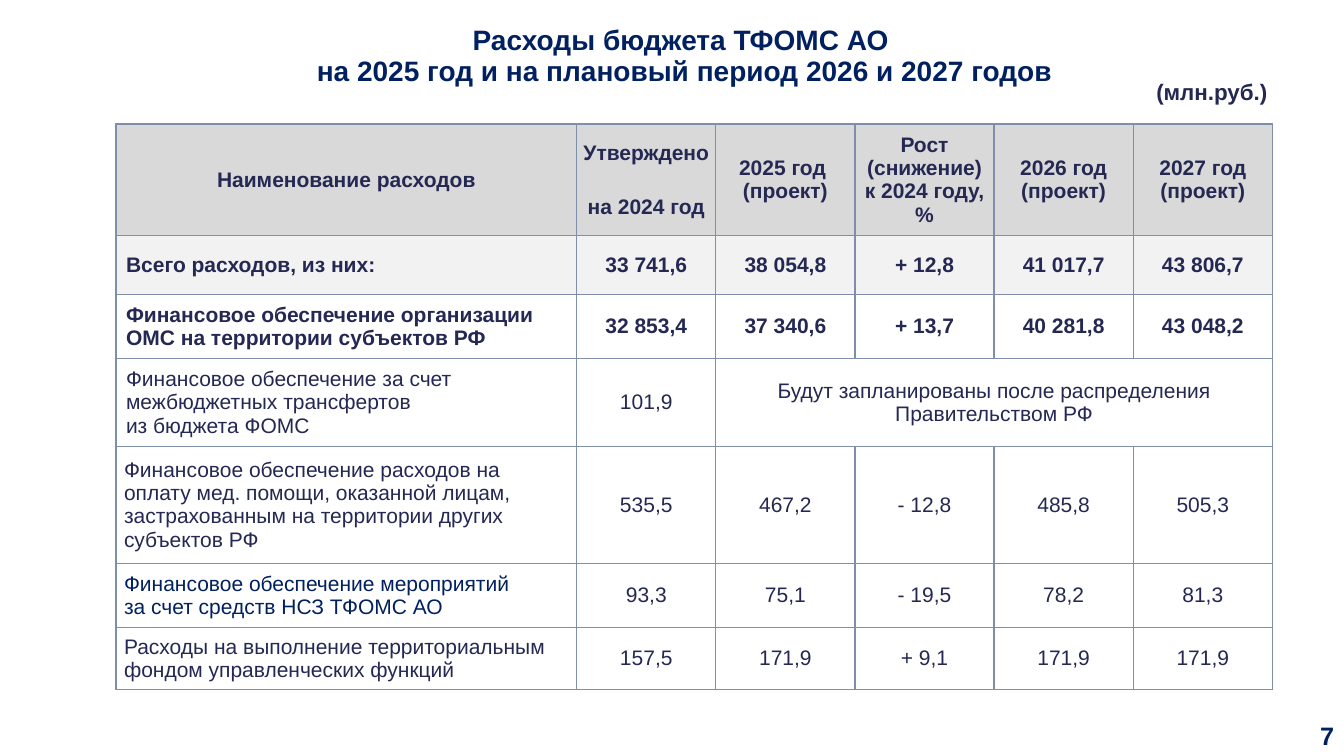
"""Build the slide with the planned expenses of the regional insurance fund."""
from dataclasses import dataclass

from lxml import etree
from pptx import Presentation
from pptx.dml.color import RGBColor
from pptx.enum.text import MSO_ANCHOR, PP_ALIGN
from pptx.oxml.ns import qn
from pptx.util import Inches, Pt

LEFT, CENTER, RIGHT = PP_ALIGN.LEFT, PP_ALIGN.CENTER, PP_ALIGN.RIGHT
TOP, MIDDLE = MSO_ANCHOR.TOP, MSO_ANCHOR.MIDDLE
NAVY = RGBColor(0x00, 0x20, 0x60)
INK = RGBColor(0x24, 0x28, 0x52)
HEADER_GRAY = RGBColor(0xD9, 0xD9, 0xD9)
TOTAL_GRAY = RGBColor(0xF2, 0xF2, 0xF2)
BORDER = RGBColor(0x7F, 0x8F, 0xA9)
FONT = "Arial"
TABLE_SIZE = 15
COLUMN_WIDTHS = [4.57] + [1.38] * 5
HEADER_INSETS = (0.1, 0.05, 0.1, 0, 0.1, 0.1)


@dataclass(frozen=True)
class Label:
    """A single text box or placeholder with its place and look."""

    text: str
    left: float
    top: float
    width: float
    height: float
    size: int
    color: RGBColor
    align: PP_ALIGN
    anchor: MSO_ANCHOR = TOP
    spacing: float = 1.0


@dataclass(frozen=True)
class ExpenseRow:
    """One table row with its texts and look."""

    height: float
    texts: tuple[str, ...]
    bold: bool = False
    fill: RGBColor | None = None
    name_inset: float = 0.08
    name_color: RGBColor = INK


TITLE = Label("Расходы бюджета ТФОМС АО \vна 2025 год и на плановый период 2026 и 2027 годов",
              1.71, 0.21, 10.16, 0.84, 20, NAVY, CENTER, spacing=0.92)
LABELS = (
    Label("(млн.руб.) ", 10.92, 0.73, 1.81, 0.37, 16, INK, RIGHT),
    Label("7", 12.81, 7.1, 0.52, 0.4, 18, NAVY, RIGHT, MIDDLE),
)
ROWS = (
    ExpenseRow(1.11, ("Наименование расходов", "Утверждено \vна 2024 год", "2025 год \n(проект)",
                      "Рост (снижение)\vк 2024 году,\v%", "2026 год (проект)",
                      "2027 год (проект)"), True, HEADER_GRAY),
    ExpenseRow(0.58, ("Всего расходов, из них:", "33 741,6", "38 054,8", "+ 12,8",
                      "41 017,7", "43 806,7"), True, TOTAL_GRAY, 0.1),
    ExpenseRow(0.64, ("Финансовое обеспечение организации ОМС на территории субъектов РФ",
                      "32 853,4", "37 340,6", "+ 13,7", "40 281,8", "43 048,2"),
               True, name_inset=0.1),
    ExpenseRow(0.87, ("Финансовое обеспечение за счет межбюджетных трансфертов \v"
                      "из бюджета ФОМС", "101,9",
                      "Будут запланированы после распределения Правительством РФ"),
               name_inset=0.1),
    ExpenseRow(1.16, ("Финансовое обеспечение расходов на оплату мед. помощи, оказанной лицам, "
                      "застрахованным на территории других субъектов РФ",
                      "535,5", "467,2", "- 12,8", "485,8", "505,3")),
    ExpenseRow(0.64, ("Финансовое обеспечение мероприятий \vза счет средств НСЗ ТФОМС АО",
                      "93,3", "75,1", "- 19,5", "78,2", "81,3"), name_color=NAVY),
    ExpenseRow(0.61, ("Расходы на выполнение территориальным фондом управленческих функций",
                      "157,5", "171,9", "+ 9,1", "171,9", "171,9")),
)


def format_text(text_frame, size: int, color: RGBColor, bold: bool, align: PP_ALIGN) -> None:
    """Apply one font and alignment to every paragraph."""
    for paragraph in text_frame.paragraphs:
        paragraph.alignment = align
        for run in paragraph.runs:
            run.font.name = FONT
            run.font.size = Pt(size)
            run.font.bold = bold
            run.font.color.rgb = color


def fill_label(shape, label: Label) -> None:
    """Place a shape and write its label."""
    shape.left, shape.top = Inches(label.left), Inches(label.top)
    shape.width, shape.height = Inches(label.width), Inches(label.height)
    text_frame = shape.text_frame
    text_frame.text = label.text
    text_frame.word_wrap = True
    text_frame.vertical_anchor = label.anchor
    text_frame.paragraphs[0].line_spacing = label.spacing
    format_text(text_frame, label.size, label.color, True, label.align)


def add_borders(cell) -> None:
    """Draw a thin line on all four sides of a cell."""
    properties = cell._tc.get_or_add_tcPr()
    for index, side in enumerate(("a:lnL", "a:lnR", "a:lnT", "a:lnB")):
        line = etree.Element(qn(side), w=str(Pt(1)))
        fill = etree.SubElement(line, qn("a:solidFill"))
        etree.SubElement(fill, qn("a:srgbClr"), val=str(BORDER))
        properties.insert(index, line)


def fill_cell(cell, row: ExpenseRow, column: int) -> None:
    """Write and format one table cell."""
    is_header = row is ROWS[0]
    if is_header:
        inset = HEADER_INSETS[column]
    elif column == 0:
        inset = row.name_inset
    else:
        inset = 0.08 if column == 1 else 0.1
    cell.margin_left = cell.margin_right = Inches(inset)
    cell.margin_top = cell.margin_bottom = Inches(0)
    cell.vertical_anchor = MIDDLE
    if row.fill is None:
        cell.fill.background()
    else:
        cell.fill.solid()
        cell.fill.fore_color.rgb = row.fill
    if column < len(row.texts):
        cell.text_frame.text = row.texts[column]
    color = row.name_color if column == 0 else INK
    align = LEFT if column == 0 and not is_header else CENTER
    format_text(cell.text_frame, TABLE_SIZE, color, row.bold, align)
    add_borders(cell)


def add_expense_table(slide) -> None:
    """Add the expense table."""
    frame = slide.shapes.add_table(len(ROWS), len(COLUMN_WIDTHS), Inches(1.15), Inches(1.23),
                                   Inches(sum(COLUMN_WIDTHS)),
                                   Inches(sum(row.height for row in ROWS)))
    table = frame.table
    table.first_row = table.horz_banding = False
    for column, width in zip(table.columns, COLUMN_WIDTHS):
        column.width = Inches(width)
    for row_index, row in enumerate(ROWS):
        table.rows[row_index].height = Inches(row.height)
        for column_index in range(len(COLUMN_WIDTHS)):
            fill_cell(table.cell(row_index, column_index), row, column_index)
        if len(row.texts) < len(COLUMN_WIDTHS):
            last_cell = table.cell(row_index, len(COLUMN_WIDTHS) - 1)
            table.cell(row_index, len(row.texts) - 1).merge(last_cell)


def main() -> None:
    """Create and save the presentation."""
    presentation = Presentation()
    presentation.slide_width, presentation.slide_height = Inches(13.33), Inches(7.5)
    slide = presentation.slides.add_slide(presentation.slide_layouts[5])
    fill_label(slide.shapes.title, TITLE)
    add_expense_table(slide)
    for label in LABELS:
        box = slide.shapes.add_textbox(Inches(label.left), Inches(label.top),
                                       Inches(label.width), Inches(label.height))
        fill_label(box, label)
    presentation.save("out.pptx")


if __name__ == "__main__":
    main()
